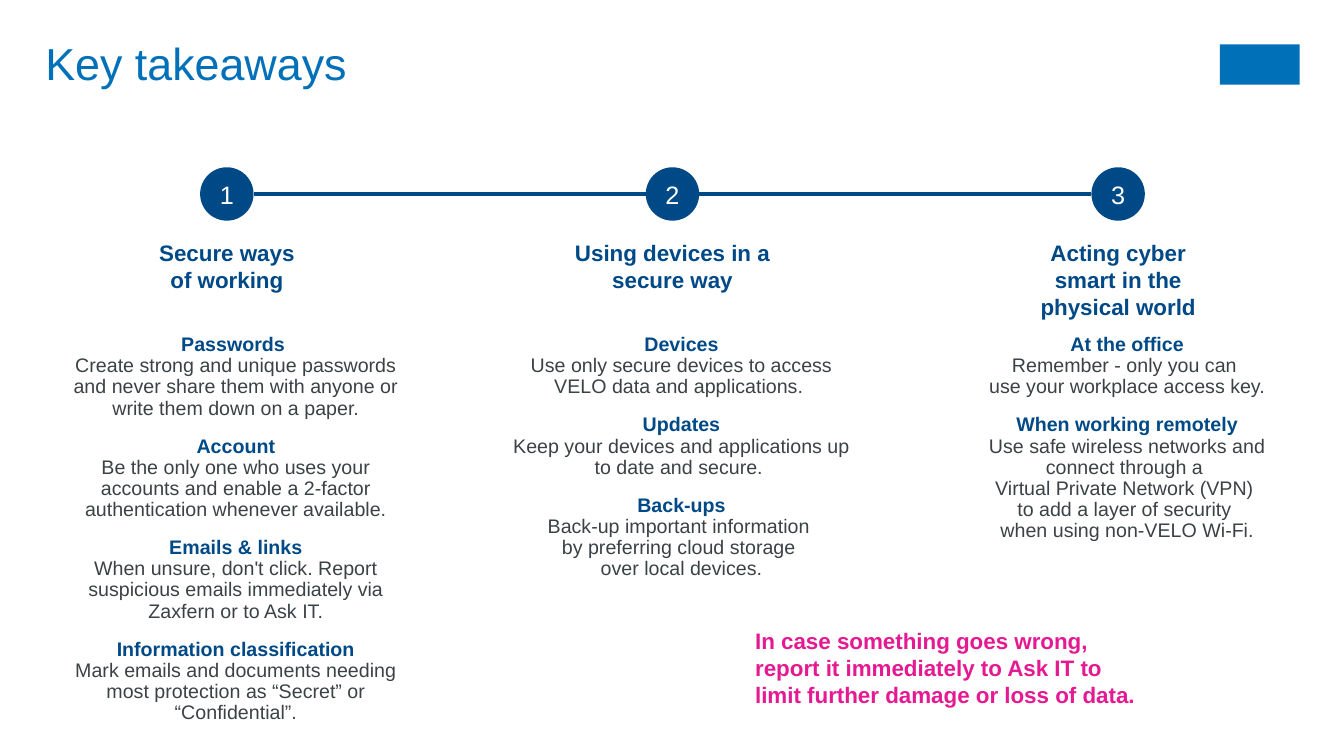
from lxml import etree
from pptx import Presentation
from pptx import util as u
from pptx.dml.color import RGBColor
from pptx.enum import shapes, text
from pptx.oxml.ns import qn

COLORS = {
    "title": "0071B9",
    "navy": "004987",
    "body": "3B4245",
    "alert": "E51A92",
    "white": "FFFFFF",
}
FONT = "Arial"
FIRST_CENTER, PITCH = 2.25, 4.42
BADGE, BADGE_TOP = 0.53, 1.66

TAKEAWAYS = [
    {
        "heading": "Secure ways of working",
        "heading_size": (1.72, 0.64),
        "body_height": 4,
        "topics": [
            ("Passwords ", "Create strong and unique passwords and never share them with anyone "
             "or write them down on a paper."),
            ("Account", "Be the only one who uses your accounts and enable a 2-factor "
             "authentication whenever available."),
            ("Emails & links", "When unsure, don't click. Report suspicious emails immediately via "
             "Zaxfern or to Ask IT."),
            ("Information classification", "Mark emails and documents needing most protection as "
             "“Secret” or “Confidential”."),
        ],
    },
    {
        "heading": "Using devices in a secure way",
        "heading_size": (2.27, 0.64),
        "body_height": 2.56,
        "topics": [
            ("Devices", "Use only secure devices to access VELO data and applications. "),
            ("Updates", "Keep your devices and applications up to date and secure. "),
            ("Back-ups", "Back-up important information \nby preferring cloud storage \n"
             "over local devices."),
        ],
    },
    {
        "heading": "Acting cyber smart in the physical world",
        "heading_size": (2.15, 0.91),
        "heading_opacity": 70,
        "body_height": 2.18,
        "topics": [
            ("At the office", "Remember - only you can \nuse your workplace access key."),
            ("When working remotely", "Use safe wireless networks and connect through a \n"
             "Virtual Private Network (VPN) \nto add a layer of security \n"
             "when using non-VELO Wi-Fi."),
        ],
    },
]


def rgb(name):
    return RGBColor.from_string(COLORS[name])


def add_words(paragraph, words, size, color, bold=False):
    for index, line in enumerate(words.split("\n")):
        if index:
            paragraph.add_line_break()
        run = paragraph.add_run()
        run.text = line
        run.font.name = FONT
        run.font.size = u.Pt(size)
        run.font.bold = bold
        run.font.color.rgb = rgb(color)


def add_panel(slide, kind, box, color):
    panel = slide.shapes.add_shape(kind, *map(u.Inches, box))
    panel.shadow.inherit = False
    panel.fill.solid()
    panel.fill.fore_color.rgb = rgb(color)
    panel.line.fill.background()
    panel.text_frame.vertical_anchor = text.MSO_ANCHOR.MIDDLE
    panel.text_frame.paragraphs[0].alignment = text.PP_ALIGN.CENTER
    return panel


def add_text_area(slide, box, inset_x=0.1, inset_y=0.05):
    frame = slide.shapes.add_textbox(*map(u.Inches, box)).text_frame
    frame.word_wrap = True
    frame.margin_left = frame.margin_right = u.Inches(inset_x)
    frame.margin_top = frame.margin_bottom = u.Inches(inset_y)
    return frame


def add_header(slide, left, top, width, height):
    title = add_text_area(slide, (left, top, width, height), 0, 0).paragraphs[0]
    title.line_spacing = 0.85
    add_words(title, "Key takeaways", 32, "title")
    add_panel(slide, shapes.MSO_SHAPE.RECTANGLE, (left + 11.65, top, 0.79, 0.4), "title")


def add_badge(slide, number, center):
    badge = add_panel(slide, shapes.MSO_SHAPE.OVAL,
                      (center - BADGE / 2, BADGE_TOP, BADGE, BADGE), "navy")
    frame = badge.text_frame
    frame.word_wrap = False
    frame.margin_left = frame.margin_right = u.Inches(0.13)
    frame.margin_top = frame.margin_bottom = u.Inches(0.07)
    add_words(frame.paragraphs[0], str(number), 18, "white")


def add_timeline_link(slide, center):
    y = u.Inches(BADGE_TOP + BADGE / 2)
    link = slide.shapes.add_connector(
        shapes.MSO_CONNECTOR.STRAIGHT,
        u.Inches(center + BADGE / 2), y, u.Inches(center + PITCH - BADGE / 2), y)
    link.line.color.rgb = rgb("navy")
    link.line.width = u.Pt(2.25)
    etree.SubElement(link._element.spPr, qn("a:effectLst"))


def add_heading(slide, takeaway, center, top):
    width, height = takeaway["heading_size"]
    heading = add_panel(slide, shapes.MSO_SHAPE.RECTANGLE,
                        (center - width / 2, top, width, height), "white")
    if "heading_opacity" in takeaway:
        tint = heading._element.spPr.find(qn("a:solidFill"))[0]
        etree.SubElement(tint, qn("a:alpha"), val=str(takeaway["heading_opacity"] * 1000))
    heading.text_frame.word_wrap = True
    add_words(heading.text_frame.paragraphs[0], takeaway["heading"], 16, "navy", True)


def add_topics(slide, topics, box):
    frame = add_text_area(slide, box)
    for index, (topic, advice) in enumerate(topics):
        paragraph = frame.add_paragraph() if index else frame.paragraphs[0]
        paragraph.alignment = text.PP_ALIGN.CENTER
        paragraph.line_spacing = 0.9
        paragraph.space_after = u.Pt(12)
        add_words(paragraph, topic, 14, "navy", True)
        paragraph.add_line_break()
        add_words(paragraph, advice, 14, "body")


def add_takeaway(slide, number, takeaway, center):
    add_badge(slide, number, center)
    add_heading(slide, takeaway, center, BADGE_TOP + 0.66)
    add_topics(slide, takeaway["topics"],
               (center - 1.74, BADGE_TOP + 1.61, 3.66, takeaway["body_height"]))


def add_alert(slide, box):
    alert = add_text_area(slide, box, 0.06, 0.06).paragraphs[0]
    add_words(alert, "In case something goes wrong, report it immediately to Ask IT to limit "
              "further damage or loss of data.", 16, "alert", True)


def main():
    deck = Presentation()
    deck.slide_width, deck.slide_height = u.Inches(13.33), u.Inches(7.5)
    slide = deck.slides.add_slide(deck.slide_layouts[6])
    add_header(slide, 0.45, 0.44, 11.34, 0.94)
    centers = [FIRST_CENTER + PITCH * index for index in range(len(TAKEAWAYS))]
    for center in centers[:-1]:
        add_timeline_link(slide, center)
    for number, (takeaway, center) in enumerate(zip(TAKEAWAYS, centers), 1):
        add_takeaway(slide, number, takeaway, center)
    add_alert(slide, (7.43, 6.16, 4, 0.93))
    deck.save("out.pptx")


if __name__ == "__main__":
    main()
